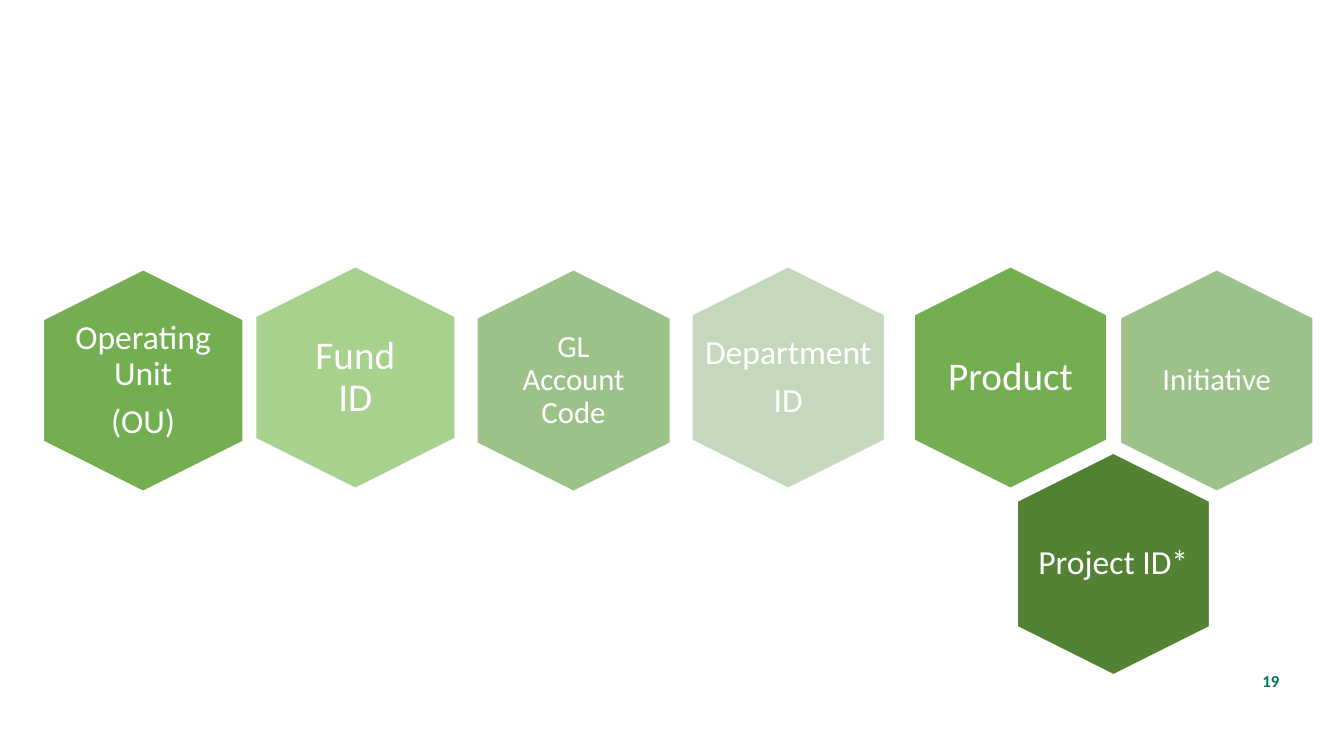
from dataclasses import dataclass

from pptx import Presentation
from pptx.dml.color import RGBColor
from pptx.enum.shapes import MSO_SHAPE as Preset
from pptx.enum.text import MSO_ANCHOR as Anchor, PP_ALIGN as Align
from pptx.util import Inches, Pt


@dataclass(frozen=True)
class Theme:
    font: str = "Calibri"
    white: str = "FFFFFF"
    number: str = "007851"
    grass: str = "73AE51"
    lime: str = "A9D18E"
    sage: str = "9CC189"
    mist: str = "C5D8BD"
    forest: str = "548235"
    tiny: int = 12
    small: int = 22
    medium: int = 24
    large: int = 28


def write(box, text, size, color, bold=False, align=Align.CENTER,
          leading=0.9, gap=0.35, inset=0.0, font=Theme.font):
    """Fill a box with one paragraph per line of text; gap is a share of size."""
    frame = box.text_frame
    frame.word_wrap = True
    frame.vertical_anchor = Anchor.MIDDLE
    frame.margin_left = frame.margin_right = Inches(inset)
    frame.margin_top = frame.margin_bottom = Inches(inset)
    for index, line in enumerate(text.split("\n")):
        para = frame.add_paragraph() if index else frame.paragraphs[0]
        para.alignment = align
        para.line_spacing = leading
        para.space_after = Pt(gap * size)
        span = para.add_run()
        span.text = line
        span.font.name = font
        span.font.size = Pt(size)
        span.font.bold = bold
        span.font.color.rgb = RGBColor.from_string(color)


class Board:
    """A page on a grid of 133.33 columns by 75 rows."""
    columns, rows = 133.33, 75

    def __init__(self, deck, theme):
        self.theme = theme
        self.page = deck.slides.add_slide(deck.slide_layouts[6])
        self.column = deck.slide_width / self.columns
        self.row = deck.slide_height / self.rows

    def centred(self, x, y, width, height):
        """Turn a centre and a size on the grid into a slide frame."""
        return (round((x - width / 2) * self.column),
                round((y - height / 2) * self.row),
                round(width * self.column), round(height * self.row))

    def solid(self, shapes, preset, frame, fill):
        shape = shapes.add_shape(preset, *frame)
        shape.shadow.inherit = False
        shape.fill.solid()
        shape.fill.fore_color.rgb = RGBColor.from_string(fill)
        shape.line.fill.background()
        return shape

    def hexagon(self, text, x, y, breadth, fill, size, label, inset=0.0, plate=False):
        """Group an upright hexagon with its centred label, on a plate if asked."""
        shapes = self.page.shapes.add_group_shape().shapes
        outline = self.solid(shapes, Preset.HEXAGON,
                             self.centred(x, y, 22, breadth), fill)
        outline.rotation = 90
        outline.adjustments[0] = 0.25
        outline.line.color.rgb = RGBColor.from_string(self.theme.white)
        outline.line.width = Pt(1)
        frame = self.centred(x, y, *label)
        box = (self.solid(shapes, Preset.RECTANGLE, frame, fill) if plate
               else shapes.add_textbox(*frame))
        write(box, text, size, self.theme.white, inset=inset)

    def page_number(self, text, x, y, width, height):
        box = self.page.shapes.add_textbox(*self.centred(x, y, width, height))
        write(box, text, self.theme.tiny, self.theme.number, bold=True,
              align=Align.RIGHT, leading=1.0, gap=0, inset=0.1)


def main():
    deck = Presentation()
    deck.slide_width, deck.slide_height = Inches(13.33), Inches(7.5)
    theme = Theme()
    board = Board(deck, theme)
    board.page_number("19", 123.25, 67.55, 9.3, 2.9)

    # Chart-of-accounts segments: the row alternates between two heights
    high, low, bottom = 37.45, 37.75, 55.95
    narrow, wide = 19.1, 19.8
    label = (13.2, 15.1)
    board.hexagon("Operating Unit\n(OU)", 14.2, low, wide, theme.grass,
                  theme.medium, (18.1, 20.2))
    board.hexagon("Fund ID", 35.25, high, wide, theme.lime,
                  theme.large, (13.6, 15.1), inset=0.09)
    board.hexagon("GL Account Code", 56.9, low, 19.2, theme.sage,
                  theme.small, label, inset=0.09)
    board.hexagon("Product", 100.25, high, narrow, theme.grass, theme.large, label)
    board.hexagon("Initiative", 120.7, low, narrow, theme.sage,
                  theme.small, label, inset=0.09)
    board.hexagon("Department\nID", 78.2, high, narrow, theme.mist,
                  theme.medium, (19.1, 15.1))

    # Project segment, nested below the last two
    board.hexagon("Project ID*", 110.45, bottom, narrow, theme.forest,
                  theme.medium, (16.3, 13.5), plate=True)

    deck.save("out.pptx")


if __name__ == "__main__":
    main()
